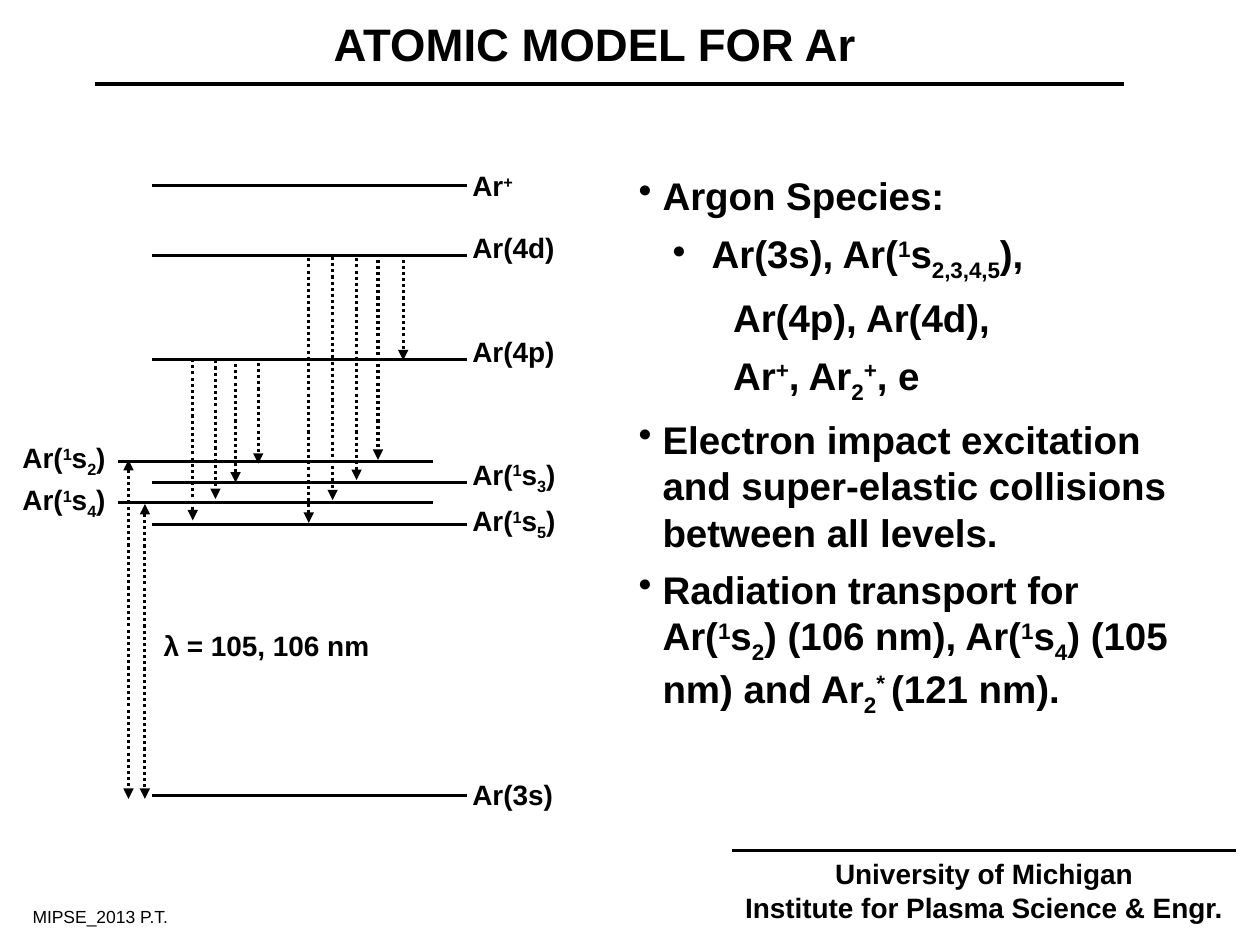
from lxml import etree
from pptx import Presentation
from pptx.dml.color import RGBColor
from pptx.enum.dml import MSO_LINE
from pptx.enum.shapes import MSO_CONNECTOR
from pptx.enum.text import MSO_AUTO_SIZE, PP_ALIGN
from pptx.oxml.ns import qn
from pptx.util import Inches, Pt

STRAIGHT = MSO_CONNECTOR.STRAIGHT
DOTTED = MSO_LINE.ROUND_DOT
CENTER = PP_ALIGN.CENTER
FIT_SHAPE = MSO_AUTO_SIZE.SHAPE_TO_FIT_TEXT

THEME = {
    "font": "Arial", "ink": RGBColor(0, 0, 0),
    "title": 26, "body": 22, "label": 16, "note": 10,
    "rule": 2.25, "level": 1.75,
}

# Content: "|" separates runs, "^" marks a superscript and "_" a subscript
TITLE = "ATOMIC MODEL FOR Ar"
FOOTER = ["University of Michigan", "Institute for Plasma Science & Engr."]
NOTE = "MIPSE_2013 P.T."
WAVELENGTHS = "λ = 105, 106 nm"

# Body paragraphs: style, text
BODY = [
    ("main", "Argon Species:"),
    ("sub", "Ar(3s), Ar(|^1|s|_2,3,4,5|),"),
    ("more", "Ar(4p), Ar(4d),"),
    ("more", "Ar|^+|, Ar|_2|^+|, e"),
    ("main", "Electron impact excitation and super-elastic collisions "
             "between all levels."),
    ("main", "Radiation transport for Ar(|^1|s|_2|) (106 nm), Ar(|^1|s|_4|) "
             "(105 nm) and Ar|_2|^* |(121 nm)."),
]
# Style: left margin, first-line indent, has a bullet
STYLES = {"main": (0.19, -0.19, True), "sub": (0.58, -0.31, True),
          "more": (0.75, 0, False)}

# Energy levels: label, label side, line y, label top
LEVELS = [
    ("Ar|^+", "right", 1.47, 1.29),
    ("Ar(4d)", "right", 2.03, 1.78),
    ("Ar(4p)", "right", 2.85, 2.61),
    ("Ar(|^1|s|_2|)", "left", 3.66, 3.45),
    ("Ar(|^1|s|_3|)", "right", 3.83, 3.58),
    ("Ar(|^1|s|_4|)", "left", 3.99, 3.78),
    ("Ar(|^1|s|_5|)", "right", 4.16, 3.95),
    ("Ar(3s)", "right", 6.31, 6.12),
]
# Side: line left, label left, label width
SIDES = {"right": (1.21, 3.65, 1.25), "left": (0.94, 0.08, 1.1)}
LEVEL_LENGTH = 2.5

# Transitions: x, top, bottom
EMISSIONS = [
    (1.53, 2.85, 4.13), (1.71, 2.86, 3.96), (1.87, 2.89, 3.83), (2.05, 2.88, 3.68),
    (2.45, 2.05, 4.15), (2.64, 2.04, 3.97), (2.83, 2.05, 3.81), (3.0, 2.06, 3.65),
    (3.2, 2.06, 2.86),
]
RESONANCES = [(1.02, 3.65, 6.34), (1.15, 4.0, 6.34)]


def add_line(s, x1, y1, x2, y2, width, dotted=False, ends=()):
    line = s.shapes.add_connector(STRAIGHT, *map(Inches, (x1, y1, x2, y2)))
    line.line.color.rgb = THEME["ink"]
    line.line.width = Pt(width)
    if dotted:
        line.line.dash_style = DOTTED
    ln = line.line._get_or_add_ln()
    for end in ends:
        etree.SubElement(ln, qn("a:" + end), type="triangle")
    etree.SubElement(line._element.spPr, qn("a:effectLst"))


def add_runs(p, text, size, bold):
    for part in text.split("|"):
        r = p.add_run()
        r.text = part.lstrip("^_")
        if part[0] in "^_":
            base = "30000" if part[0] == "^" else "-25000"
            r._r.get_or_add_rPr().set("baseline", base)
    p.font.name, p.font.size, p.font.bold = THEME["font"], Pt(size), bold
    p.font.color.rgb = THEME["ink"]


def add_text(s, x, y, w, h, lines, size, bold=True, wrap=True, align=None):
    tf = s.shapes.add_textbox(*map(Inches, (x, y, w, h))).text_frame
    tf.word_wrap = wrap
    tf.auto_size = FIT_SHAPE
    for i, text in enumerate(lines):
        p = tf.add_paragraph() if i else tf.paragraphs[0]
        p.alignment = align
        add_runs(p, text, size, bold)
    return tf


def style_paragraph(p, style):
    margin, indent, bullet = STYLES[style]
    pPr = p._p.get_or_add_pPr()
    pPr.set("marL", str(Inches(margin)))
    pPr.set("indent", str(Inches(indent)))
    p.space_after = Pt(0.3 * THEME["body"])
    if bullet:
        mark = etree.Element(qn("a:buChar"), char="•")
        pPr.find(qn("a:defRPr")).addprevious(mark)


prs = Presentation()
prs.slide_width, prs.slide_height = Inches(10), Inches(7.5)
s = prs.slides.add_slide(prs.slide_layouts[6])

# Title and its rule
add_text(s, 2.55, 0.08, 4.38, 0.54, [TITLE], THEME["title"], wrap=False)
add_line(s, 0.75, 0.67, 8.92, 0.67, THEME["rule"])

# Body text
tf = add_text(s, 4.97, 1.32, 4.43, 4.47, [text for _, text in BODY], THEME["body"])
for p, (style, _) in zip(tf.paragraphs, BODY):
    style_paragraph(p, style)

# Energy levels
for label, side, y, label_y in LEVELS:
    x, label_x, label_w = SIDES[side]
    add_line(s, x, y, x + LEVEL_LENGTH, y, THEME["level"])
    add_text(s, label_x, label_y, label_w, 0.37, [label], THEME["label"])

# Transitions
for x, top, bottom in EMISSIONS:
    add_line(s, x, top, x, bottom, THEME["level"], True, ["tailEnd"])
for x, top, bottom in RESONANCES:
    add_line(s, x, top, x, bottom, THEME["level"], True, ["headEnd", "tailEnd"])
add_text(s, 1.2, 4.94, 2, 0.37, [WAVELENGTHS], THEME["label"])

# Footer
add_line(s, 5.81, 6.75, 9.81, 6.75, THEME["rule"])
add_text(s, 5.75, 6.75, 4.12, 0.64, FOOTER, THEME["label"], align=CENTER)
add_text(s, 0.16, 7.14, 1.32, 0.27, [NOTE], THEME["note"], bold=False, wrap=False)

prs.save("out.pptx")
